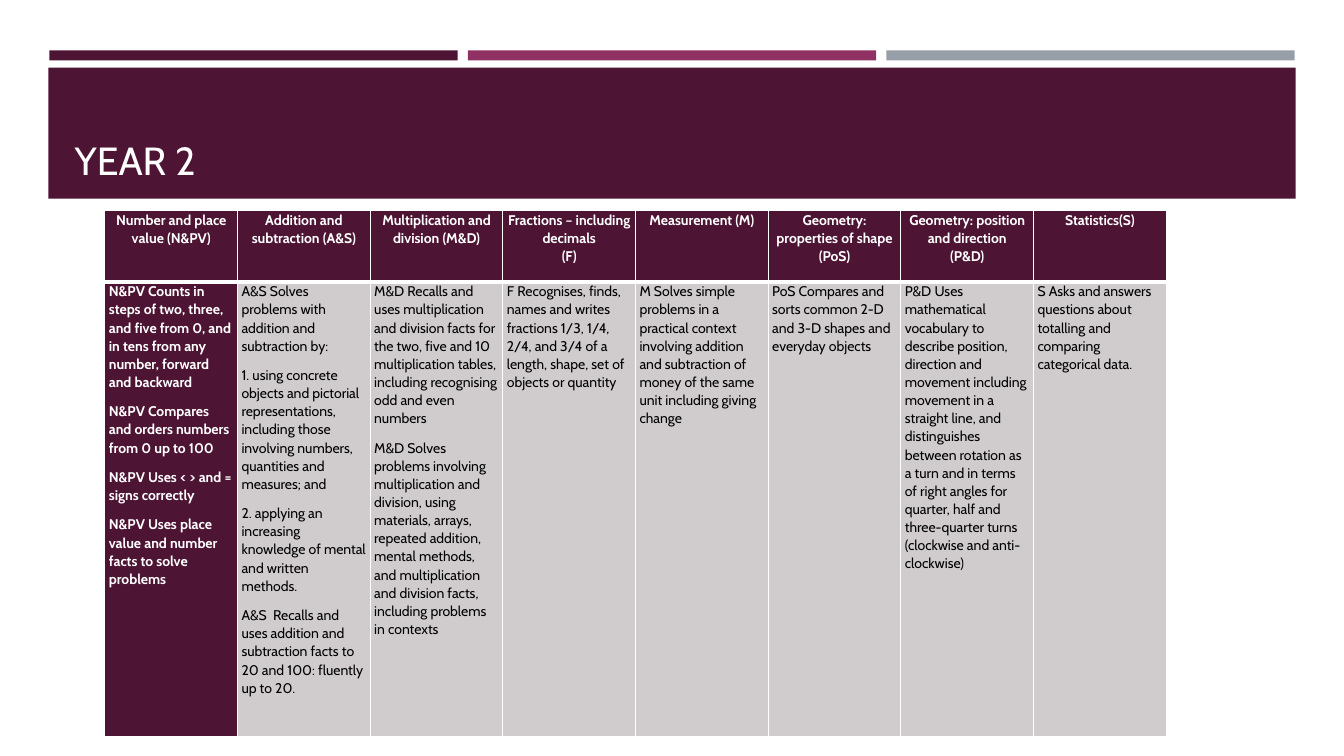
"""Build the Year 2 mathematics objectives slide."""
from dataclasses import dataclass

from lxml.etree import SubElement
from pptx import Presentation
from pptx.dml.color import RGBColor
from pptx.enum.shapes import MSO_SHAPE
from pptx.enum.text import MSO_ANCHOR, MSO_AUTO_SIZE, PP_ALIGN
from pptx.oxml.ns import qn
from pptx.util import Inches, Pt

TITLE = "YEAR 2"
STRANDS = [
    (["Number and place value (N&PV)"],
     ["N&PV Counts in steps of two, three, and five from 0, and in tens from any number, "
      "forward and backward",
      "N&PV Compares and orders numbers from 0 up to 100",
      "N&PV Uses < > and = signs correctly",
      "N&PV Uses place value and number facts to solve problems"]),
    (["Addition and subtraction (A&S)"],
     ["A&S Solves problems with addition and subtraction by:",
      "1. using concrete objects and pictorial representations, including those involving "
      "numbers, quantities and measures; and",
      "2. applying an increasing knowledge of mental and written methods.",
      "A&S  Recalls and uses addition and subtraction facts to 20 and 100: fluently up to 20."]),
    (["Multiplication and division (M&D)"],
     ["M&D Recalls and uses multiplication and division facts for the two, five and 10 "
      "multiplication tables, including recognising odd and even numbers",
      "M&D Solves problems involving multiplication and division, using materials, arrays, "
      "repeated addition, mental methods, and multiplication and division facts, including "
      "problems in contexts"]),
    (["Fractions – including decimals", "(F)"],
     ["F Recognises, finds, names and writes fractions 1/3, 1/4, 2/4, and 3/4 of a length, "
      "shape, set of objects or quantity"]),
    (["Measurement (M)"],
     ["M Solves simple problems in a practical context involving addition and subtraction of "
      "money of the same unit including giving change"]),
    (["Geometry: properties of shape", "(PoS)"],
     ["PoS Compares and sorts common 2-D and 3-D shapes and everyday objects"]),
    (["Geometry: position and direction", "(P&D)"],
     ["P&D Uses mathematical vocabulary to describe position, direction and movement including "
      "movement in a straight line, and distinguishes between rotation as a turn and in terms "
      "of right angles for quarter, half and three-quarter turns (clockwise and anti-clockwise)"]),
    (["Statistics(S)"],
     ["S Asks and answers questions about totalling and comparing categorical data."]),
]


@dataclass(frozen=True)
class Theme:
    """Colours, font and type sizes."""
    plum: str = "4D1434"
    magenta: str = "903163"
    grey: str = "969FA7"
    pale: str = "D0CCCE"
    white: str = "FFFFFF"
    black: str = "000000"
    font: str = "Cabin"
    title: int = 28
    body: int = 10


T = Theme()
BARS = [T.plum, T.magenta, T.grey]
BAR_LEFT, BAR_STEP = 0.49, 4.15
ROWS = [0.71, 4.51]
COL = 1.316


def style_font(font, size, color, bold=False):
    """Apply one type style."""
    font.name, font.size, font.bold = T.font, Pt(size), bold
    font.color.rgb = RGBColor.from_string(color)


def add_band(s, left, top, width, height, color):
    """Add a plain filled rectangle."""
    sp = s.shapes.add_shape(MSO_SHAPE.RECTANGLE, *map(Inches, (left, top, width, height)))
    sp.shadow.inherit = False
    sp.fill.solid()
    sp.fill.fore_color.rgb = RGBColor.from_string(color)
    sp.line.fill.background()


def add_borders(cell, top, bottom):
    """Draw white rules around a cell."""
    tc_pr = cell._tc.get_or_add_tcPr()
    for side, width in zip("LRTB", (1, 1, top, bottom)):
        ln = SubElement(tc_pr, qn(f"a:ln{side}"), w=str(Pt(width)))
        SubElement(SubElement(ln, qn("a:solidFill")), qn("a:srgbClr"), val=T.white)


def fill_cell(cell, lines, header, dark):
    """Write and format one table cell."""
    add_borders(cell, *((1, 3) if header else (3, 1)))
    cell.fill.solid()
    cell.fill.fore_color.rgb = RGBColor.from_string(T.plum if dark else T.pale)
    cell.margin_left = cell.margin_right = Inches(0.04)
    cell.margin_top = cell.margin_bottom = 0
    tf = cell.text_frame
    tf.text = "\n".join(lines)
    for p in tf.paragraphs:
        p.alignment = PP_ALIGN.CENTER if header else PP_ALIGN.LEFT
        p.line_spacing = 1.07
        p.space_after = Pt(0 if header else 8)
        style_font(p.font, T.body, T.white if dark else T.black, dark)


def add_title(s):
    """Place the title over its band."""
    sp = s.shapes.title
    s.shapes._spTree.append(sp._element)
    sp.left, sp.top, sp.width, sp.height = map(Inches, (0.64, 0.77, 12.06, 1.11))
    tf = sp.text_frame
    tf.text = TITLE
    tf.word_wrap, tf.auto_size = True, MSO_AUTO_SIZE.NONE
    tf.vertical_anchor = MSO_ANCHOR.BOTTOM
    p = tf.paragraphs[0]
    p.alignment = PP_ALIGN.LEFT
    p.line_spacing = 0.9
    style_font(p.font, T.title, T.white)


def add_objectives(s):
    """Add the table of strands and objectives."""
    n = len(STRANDS)
    box = map(Inches, (1.04, 2.09, COL * n, sum(ROWS)))
    table = s.shapes.add_table(len(ROWS), n, *box).table
    for row, height in zip(table.rows, ROWS):
        row.height = Inches(height)
    for c, strand in enumerate(STRANDS):
        table.columns[c].width = Inches(COL)
        for r, lines in enumerate(strand):
            fill_cell(table.cell(r, c), lines, header=r == 0, dark=r == 0 or c == 0)


def main():
    """Assemble and save the slide."""
    prs = Presentation()
    prs.slide_width, prs.slide_height = Inches(13.33), Inches(7.5)
    s = prs.slides.add_slide(prs.slide_layouts[5])
    for i, color in enumerate(BARS):
        add_band(s, BAR_LEFT + i * BAR_STEP, 0.5, 4.05, 0.1, color)
    add_band(s, 0.48, 0.67, 12.37, 1.3, T.plum)
    add_title(s)
    add_objectives(s)
    prs.save("out.pptx")


if __name__ == "__main__":
    main()
